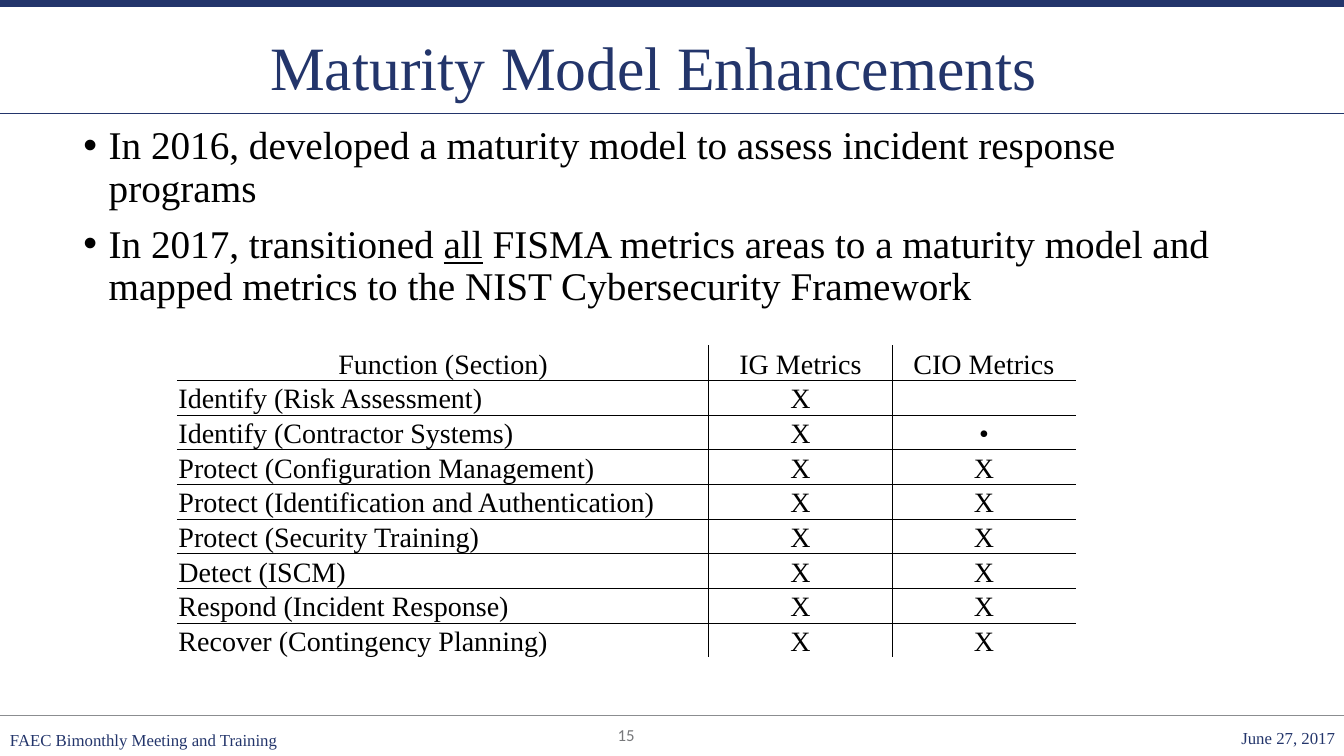
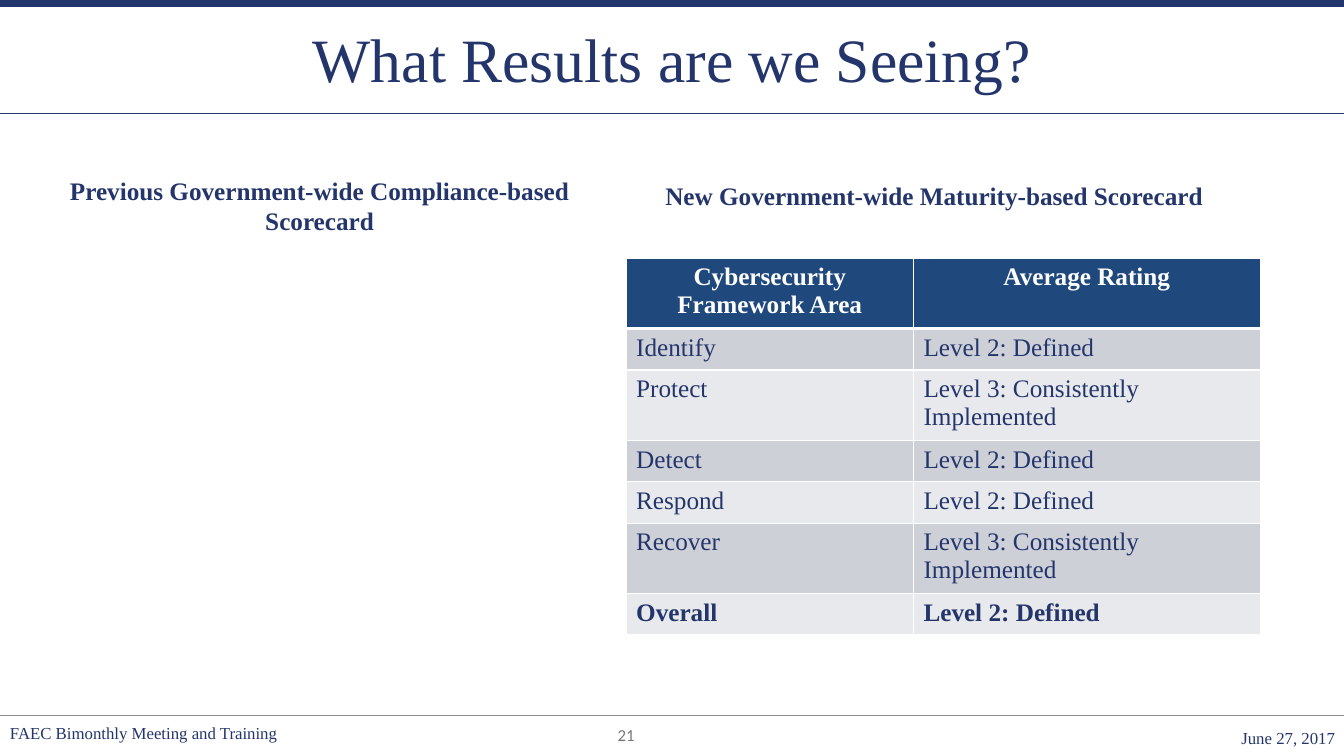
from pptx import Presentation
from pptx.dml.color import RGBColor
from pptx.enum.shapes import MSO_CONNECTOR
from pptx.enum.text import MSO_ANCHOR, PP_ALIGN
from pptx.oxml.ns import qn
from pptx.util import Inches, Pt
from lxml import etree

LEFT, CENTER, RIGHT = PP_ALIGN.LEFT, PP_ALIGN.CENTER, PP_ALIGN.RIGHT
TOP, MIDDLE, BOTTOM = MSO_ANCHOR.TOP, MSO_ANCHOR.MIDDLE, MSO_ANCHOR.BOTTOM
STRAIGHT = MSO_CONNECTOR.STRAIGHT

COLORS = {
    "navy": "23356B", "rule": "8B8D90", "number": "77787B", "black": "000000",
    "white": "FFFFFF", "header": "1F497D", "band_dark": "CDD0D7", "band_light": "E8E9EC",
}
SERIF, SANS = "Times New Roman", "Calibri"


def write(frame, paragraphs, size, color="navy", align=LEFT, anchor=TOP,
          bold=False, font=SERIF, spacing=1.0):
    """Fill a text frame; each paragraph is a list of (text, underline) runs."""
    frame.word_wrap = True
    frame.vertical_anchor = anchor
    for i, runs in enumerate(paragraphs):
        paragraph = frame.paragraphs[0] if i == 0 else frame.add_paragraph()
        paragraph.alignment = align
        paragraph.line_spacing = spacing
        for text, underline in runs:
            run = paragraph.add_run()
            run.text = text
            style = {"name": font, "size": Pt(size), "bold": bold, "underline": underline}
            for attribute, value in style.items():
                setattr(run.font, attribute, value)
            run.font.color.rgb = RGBColor.from_string(COLORS[color])


def set_borders(cell, borders):
    """Draw cell borders from {side tag: (colour, points)}, in schema order."""
    properties = cell._tc.get_or_add_tcPr()
    for position, (side, (color, points)) in enumerate(borders.items()):
        line = etree.Element(qn(f"a:{side}"), w=str(Pt(points)))
        fill = etree.SubElement(line, qn("a:solidFill"))
        etree.SubElement(fill, qn("a:srgbClr"), val=COLORS[color])
        properties.insert(position, line)


prs = Presentation()
prs.slide_width, prs.slide_height = Inches(13.33), Inches(7.5)

# Shared frame: rules, title, footer, page number and date
RULES = [(7.1, "rule", 0.75), (0.03, "navy", 5), (1.13, "navy", 0.75)]
PAGES = [
    # title, title box, page number, top of footer
    ("Maturity Model Enhancements", (0.38, 0.19, 12.21, 1.01), "15", 7.21),
    ("What Results are we Seeing?", (0.92, 0.12, 11.5, 1.01), "21", 7.14),
]
slides = []
for title, title_box, number, footer_top in PAGES:
    slide = prs.slides.add_slide(prs.slide_layouts[6])
    slides.append(slide)
    for y, color, points in RULES:
        rule = slide.shapes.add_connector(STRAIGHT, 0, Inches(y), prs.slide_width, Inches(y))
        rule.line.color.rgb = RGBColor.from_string(COLORS[color])
        rule.line.width = Pt(points)
        etree.SubElement(rule._element.spPr, qn("a:effectLst"))
    frame_texts = [
        (title, title_box, {"size": 44, "align": CENTER, "anchor": MIDDLE, "spacing": 0.9}),
        (number, (5.22, 7.14, 1.98, 0.3),
         {"size": 12, "align": CENTER, "anchor": MIDDLE, "font": SANS, "color": "number"}),
        ("FAEC Bimonthly Meeting and Training", (0, footer_top, 3.85, 0.28),
         {"size": 12, "anchor": MIDDLE, "spacing": 0.9}),
        ("June 27, 2017", (10.95, 7.19, 2.39, 0.34),
         {"size": 12, "align": RIGHT, "spacing": 0.9}),
    ]
    for text, box, style in frame_texts:
        textbox = slide.shapes.add_textbox(*map(Inches, box))
        write(textbox.text_frame, [[(text, False)]], **style)

maturity, results = slides

# Maturity model: bullets
bullets = maturity.shapes.add_textbox(Inches(0.73), Inches(1.2), Inches(11.5), Inches(2.1))
write(bullets.text_frame, [
    [("In 2016, developed a maturity model to assess incident response programs", False)],
    [("In 2017, transitioned ", False), ("all", True),
     (" FISMA metrics areas to a maturity model and mapped metrics to the "
      "NIST Cybersecurity Framework", False)],
], size=28, color="black", spacing=0.9)
for paragraph in bullets.text_frame.paragraphs:
    paragraph.space_before = Pt(10)
    properties = paragraph._p.get_or_add_pPr()
    properties.set("marL", str(Inches(0.25)))
    properties.set("indent", str(-Inches(0.25)))
    etree.SubElement(properties, qn("a:buFont"), typeface="Arial")
    etree.SubElement(properties, qn("a:buChar"), char="•")

# Maturity model: metrics by function
METRICS = [
    ("Function (Section)", "IG Metrics", "CIO Metrics"),
    ("Identify (Risk Assessment)", "X", ""),
    ("Identify (Contractor Systems)", "X", "•"),
    ("Protect (Configuration Management)", "X", "X"),
    ("Protect (Identification and Authentication)", "X", "X"),
    ("Protect (Security Training)", "X", "X"),
    ("Detect (ISCM)", "X", "X"),
    ("Respond (Incident Response)", "X", "X"),
    ("Recover (Contingency Planning)", "X", "X"),
]
METRIC_WIDTHS = [5.27, 1.82, 1.82]
ROW_HEIGHT = 0.32
metrics = maturity.shapes.add_table(
    len(METRICS), len(METRIC_WIDTHS), Inches(1.76), Inches(3.43),
    Inches(sum(METRIC_WIDTHS)), Inches(ROW_HEIGHT * len(METRICS))).table
metrics.first_row = metrics.horz_banding = False
for column, width in zip(metrics.columns, METRIC_WIDTHS):
    column.width = Inches(width)
MARGINS = {"margin_left": 0.01, "margin_right": 0.01, "margin_top": 0.01, "margin_bottom": 0}
last_row, last_column = len(METRICS) - 1, len(METRIC_WIDTHS) - 1
for r, row in enumerate(METRICS):
    metrics.rows[r].height = Inches(ROW_HEIGHT)
    for c, text in enumerate(row):
        cell = metrics.cell(r, c)
        cell.fill.background()
        for margin, value in MARGINS.items():
            setattr(cell, margin, Inches(value))
        write(cell.text_frame, [[(text, False)]], size=20, color="black",
              align=LEFT if r and c == 0 else CENTER)
        cell.vertical_anchor = BOTTOM
        # Only inner edges carry a line
        inner = {"lnL": c > 0, "lnR": c < last_column, "lnT": r > 0, "lnB": r < last_row}
        set_borders(cell, {side: ("black", 0.5) for side, shown in inner.items() if shown})

# Results: scorecard headings
HEADINGS = [
    ("Previous Government-wide Compliance-based Scorecard", (0.35, 1.69, 5.64, 0.71), CENTER),
    ("New Government-wide Maturity-based Scorecard", (6.5, 1.74, 5.64, 0.4), LEFT),
]
for text, box, align in HEADINGS:
    heading = results.shapes.add_textbox(*map(Inches, box))
    write(heading.text_frame, [[(text, False)]], size=18, bold=True, align=align)

# Results: average rating by framework area
DEFINED, IMPLEMENTED = "Level 2: Defined", "Level 3: Consistently Implemented"
RATINGS = [
    ("Cybersecurity Framework Area", "Average Rating"),
    ("Identify", DEFINED),
    ("Protect", IMPLEMENTED),
    ("Detect", DEFINED),
    ("Respond", DEFINED),
    ("Recover", IMPLEMENTED),
    ("Overall", DEFINED),
]
RATING_WIDTHS = [2.85, 3.44]
rating_heights = [0.7 if r == 0 or row[1] == IMPLEMENTED else 0.41 - 0.01 * (r == 0)
                  for r, row in enumerate(RATINGS)]
ratings = results.shapes.add_table(
    len(RATINGS), len(RATING_WIDTHS), Inches(6.21), Inches(2.56),
    Inches(sum(RATING_WIDTHS)), Inches(sum(rating_heights))).table
for column, width in zip(ratings.columns, RATING_WIDTHS):
    column.width = Inches(width)
for r, row in enumerate(RATINGS):
    ratings.rows[r].height = Inches(rating_heights[r])
    is_header = r == 0
    band = "header" if is_header else "band_dark" if r % 2 else "band_light"
    for c, text in enumerate(row):
        cell = ratings.cell(r, c)
        cell.fill.solid()
        cell.fill.fore_color.rgb = RGBColor.from_string(COLORS[band])
        write(cell.text_frame, [[(text, False)]], size=18,
              color="white" if is_header else "navy",
              align=CENTER if is_header else LEFT,
              bold=is_header or text == "Overall" or r == len(RATINGS) - 1)
        borders = {side: ("white", 1) for side in ("lnL", "lnR", "lnT", "lnB")}
        if is_header:
            borders["lnB"] = ("white", 3)
        elif r == 1:
            borders["lnT"] = ("white", 3)
        set_borders(cell, borders)

prs.save("out.pptx")
